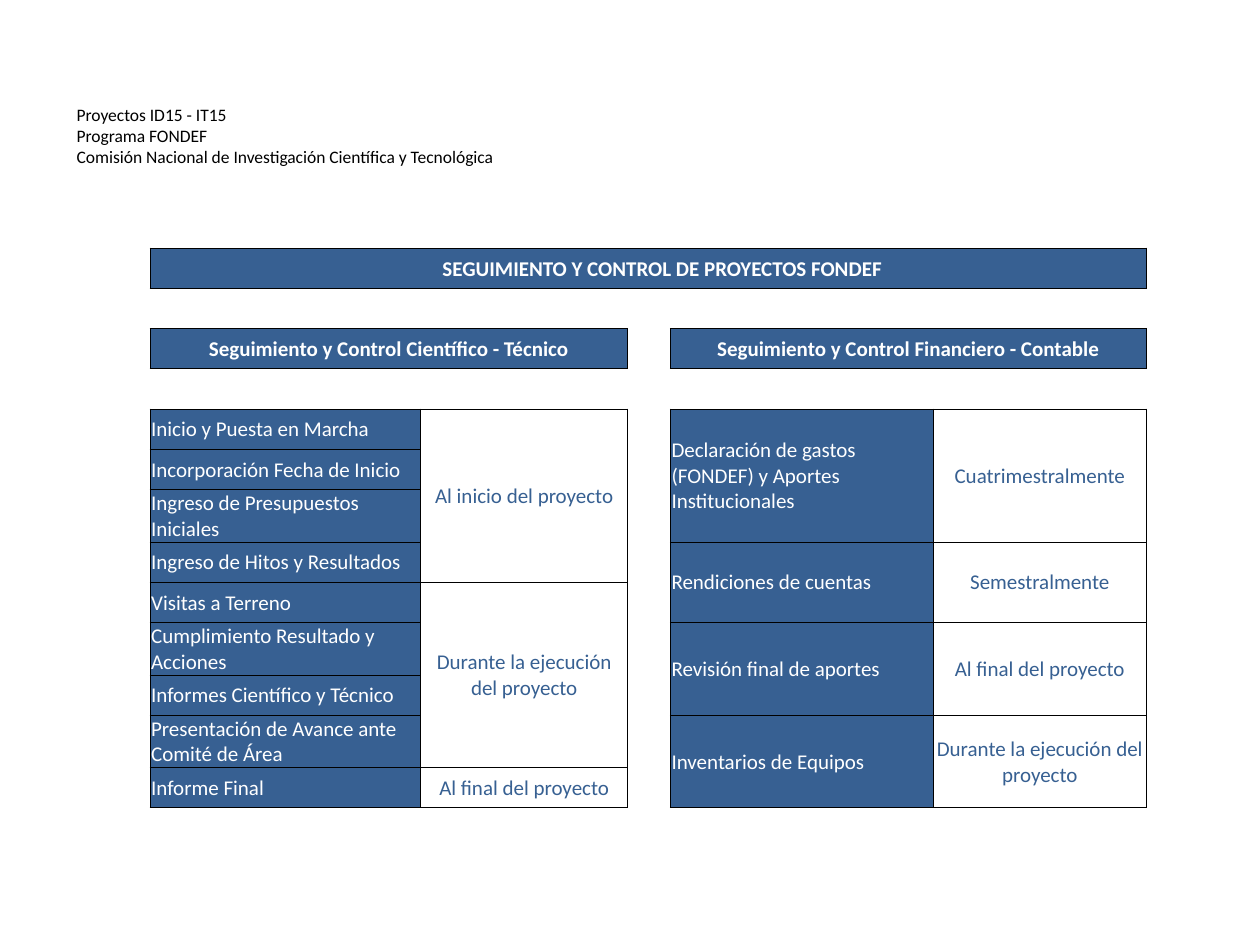
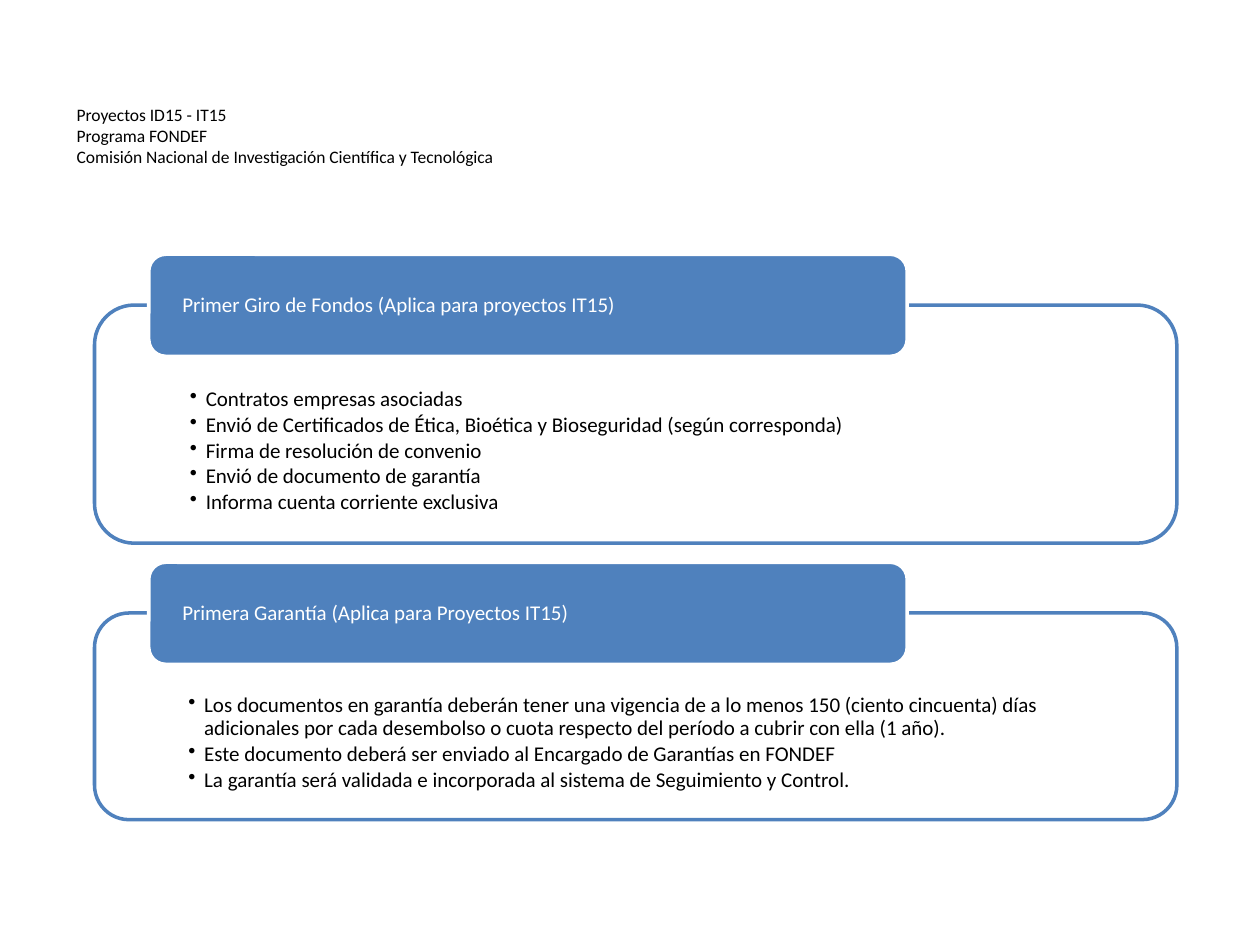
from dataclasses import dataclass
from itertools import product

from lxml.etree import SubElement
from pptx import Presentation
from pptx.dml.color import RGBColor
from pptx.enum.shapes import MSO_SHAPE as Shape
from pptx.enum.text import MSO_ANCHOR as Anchor, PP_ALIGN as Align
from pptx.oxml.ns import qn
from pptx.util import Pt

FONT = "Calibri"
NAVY, BLUE, WHITE, BLACK = "376092", "4F81BD", "FFFFFF", "000000"
PLAIN = "{2D5ABB26-0587-4C30-8999-92F81FD0307C}"
HEAD = "\v".join([
    "Proyectos ID15 - IT15",
    "Programa FONDEF",
    "Comisión Nacional de Investigación Científica y Tecnológica",
])
COLS = [49, 154.8, 118.2, 24.4, 19.4, 131, 23.6, 98, 33.8]
ROWS = [23] * 15
ROWS[7] = ROWS[10] = ROWS[12] = 30
ROWS[14] = 36.6


@dataclass
class Block:
    """A bordered run of table cells holding one text."""
    row: int
    col: int
    high: int
    wide: int
    text: str
    kind: str = "item"
    pad: float = 0.7


@dataclass
class Panel:
    """A titled frame with a bullet list."""
    top: float
    high: float
    inset: float
    title: str
    items: list[str]


KINDS = {
    "head": (NAVY, WHITE, True, Align.CENTER),
    "item": (NAVY, WHITE, False, Align.LEFT),
    "time": (WHITE, NAVY, False, Align.CENTER),
}
STEPS = [
    "Inicio y Puesta en Marcha",
    "Incorporación Fecha de Inicio",
    "Ingreso de Presupuestos Iniciales",
    "Ingreso de Hitos y Resultados",
    "Visitas a Terreno",
    "Cumplimiento Resultado y Acciones",
    "Informes Científico y Técnico",
    "Presentación de Avance ante Comité de Área",
    "Informe Final",
]
PHASES = [
    (5, 4, "Al inicio del proyecto"),
    (9, 4, "Durante la ejecución del proyecto"),
    (13, 1, "Al final del proyecto"),
]
FUNDS = [
    (5, 3, "Declaración de gastos (FONDEF) y Aportes Institucionales", "Cuatrimestralmente"),
    (8, 2, "Rendiciones de cuentas", "Semestralmente"),
    (10, 2, "Revisión final de aportes", "Al final del proyecto"),
    (12, 2, "Inventarios de Equipos", "Durante la ejecución del proyecto"),
]
BLOCKS = [
    Block(1, 1, 1, 7, "SEGUIMIENTO Y CONTROL DE PROYECTOS FONDEF", "head", 17),
    Block(3, 1, 1, 2, "Seguimiento y Control Científico - Técnico", "head"),
    Block(3, 4, 1, 4, "Seguimiento y Control Financiero - Contable", "head"),
    *[Block(row, 1, 1, 1, text) for row, text in enumerate(STEPS, 5)],
    *[Block(row, 2, high, 1, text, "time") for row, high, text in PHASES],
    *[Block(row, 4, high, 2, text) for row, high, text, _ in FUNDS],
    *[Block(row, 6, high, 2, text, "time") for row, high, _, text in FUNDS],
]
PANELS = [
    Panel(174.3, 136.1, 6.6, "Primer Giro de Fondos (Aplica para proyectos IT15)", [
        "Contratos empresas asociadas",
        "Envió de Certificados de Ética, Bioética y Bioseguridad (según corresponda)",
        "Firma de resolución de convenio",
        "Envió de documento de garantía",
        "Informa cuenta corriente exclusiva",
    ]),
    Panel(350.3, 118.1, 5.7, "Primera Garantía (Aplica para Proyectos IT15)", [
        "Los documentos en garantía deberán tener una vigencia de a lo menos 150 "
        "(ciento cincuenta) días adicionales por cada desembolso o cuota respecto "
        "del período a cubrir con ella (1 año).",
        "Este documento deberá ser enviado al Encargado de Garantías en FONDEF",
        "La garantía será validada e incorporada al sistema de Seguimiento y Control.",
    ]),
]


def tint(code: str) -> RGBColor:
    """Turn a hex string into a colour."""
    return RGBColor.from_string(code)


def apply(obj, **vals) -> None:
    """Set each named value on an object."""
    for name, val in vals.items():
        setattr(obj, name, val)


def pads(obj, left: float, top: float, right: float, foot: float) -> None:
    """Set the inner margins in points."""
    apply(obj, margin_left=Pt(left), margin_top=Pt(top),
          margin_right=Pt(right), margin_bottom=Pt(foot))


def write(para, text: str, size: float, code: str, bold: bool = False) -> None:
    """Fill a paragraph with text in one format."""
    para.text = text
    for run in para.runs:
        apply(run.font, name=FONT, size=Pt(size), bold=bold)
        run.font.color.rgb = tint(code)


def label(slide, box: tuple, anchor=Anchor.MIDDLE, ins: tuple = (7.2, 3.6, 7.2, 3.6)):
    """Add an empty wrapping text box and return its frame."""
    frame = slide.shapes.add_textbox(*map(Pt, box)).text_frame
    apply(frame, word_wrap=True, vertical_anchor=anchor)
    pads(frame, *ins)
    return frame


def banner(slide) -> None:
    """Add the heading that both slides share."""
    frame = label(slide, (36.7, 37.4, 562.3, 79.9))
    write(frame.paragraphs[0], HEAD, 10, BLACK)


def edge(cell) -> None:
    """Draw thin black lines round a cell."""
    props = cell._tc.get_or_add_tcPr()
    for side in "LRTB":
        line = SubElement(props, qn(f"a:ln{side}"), w=str(Pt(0.5)))
        fill = SubElement(line, qn("a:solidFill"))
        SubElement(fill, qn("a:srgbClr"), val=BLACK)


def paint(table, block: Block) -> None:
    """Draw one block of the table."""
    fill, ink, bold, align = KINDS[block.kind]
    last = block.row + block.high, block.col + block.wide
    for row, col in product(range(block.row, last[0]), range(block.col, last[1])):
        cell = table.cell(row, col)
        edge(cell)
        cell.fill.solid()
        cell.fill.fore_color.rgb = tint(fill)
    cell = table.cell(block.row, block.col)
    if block.high * block.wide > 1:
        cell.merge(table.cell(last[0] - 1, last[1] - 1))
    pads(cell, block.pad, 0.7, 0.7, 0)
    para = cell.text_frame.paragraphs[0]
    write(para, block.text, 12, ink, bold)
    para.alignment = align


def grid(slide) -> None:
    """Add the follow-up table."""
    size = len(ROWS), len(COLS)
    box = 36.7, 118.8, sum(COLS), sum(ROWS)
    table = slide.shapes.add_table(*size, *map(Pt, box)).table
    apply(table, first_row=False, horz_banding=False)
    table._tbl.tblPr.find(qn("a:tableStyleId")).text = PLAIN
    for row, high in zip(table.rows, ROWS):
        row.height = Pt(high)
    for col, wide in zip(table.columns, COLS):
        col.width = Pt(wide)
    for cell in table.iter_cells():
        pads(cell, 0.7, 0.7, 0.7, 0)
        cell.vertical_anchor = Anchor.MIDDLE
    for block in BLOCKS:
        paint(table, block)
    for cell in table.iter_cells():
        if cell.fill.type is None:
            cell.fill.background()


def plate(slide, box: tuple, fill: str, line: str) -> None:
    """Add a rounded rectangle."""
    shape = slide.shapes.add_shape(Shape.ROUNDED_RECTANGLE, *map(Pt, box))
    shape.shadow.inherit = False
    shape.fill.solid()
    shape.fill.fore_color.rgb = tint(fill)
    shape.line.color.rgb = tint(line)
    shape.line.width = Pt(2)


def bullet(para) -> None:
    """Give a paragraph a hanging dot."""
    props = para._p.get_or_add_pPr()
    props.set("marL", str(Pt(9)))
    props.set("indent", str(-Pt(9)))
    SubElement(props, qn("a:buChar"), char="•")


def panel(slide, part: Panel) -> None:
    """Draw a frame, its list and its title plate."""
    left, wide, gap = 54, 618.5, part.inset
    plate(slide, (left, part.top, wide, part.high), WHITE, BLUE)
    box = left + gap, part.top + gap, wide - 2 * gap, part.high - 2 * gap
    frame = label(slide, box, Anchor.TOP, (48, 41, 48, 6.5))
    for spot, text in enumerate(part.items):
        para = frame.add_paragraph() if spot else frame.paragraphs[0]
        bullet(para)
        write(para, text, 12, BLACK)
        apply(para, line_spacing=0.9, space_after=Pt(1.8))
    top = part.top - 29
    plate(slide, (85, top, 433.4, 58.3), BLUE, WHITE)
    frame = label(slide, (87.8, top + 2.9, 427.7, 52.6), ins=(16.4, 0, 16.4, 0))
    write(frame.paragraphs[0], part.title, 12, WHITE)
    frame.paragraphs[0].line_spacing = 0.9


def main() -> None:
    """Build and save both slides."""
    deck = Presentation()
    apply(deck, slide_width=Pt(720), slide_height=Pt(540))
    first, second = (deck.slides.add_slide(deck.slide_layouts[6]) for _ in range(2))
    banner(first)
    grid(first)
    for part in PANELS:
        panel(second, part)
    banner(second)
    deck.save("out.pptx")


if __name__ == "__main__":
    main()
